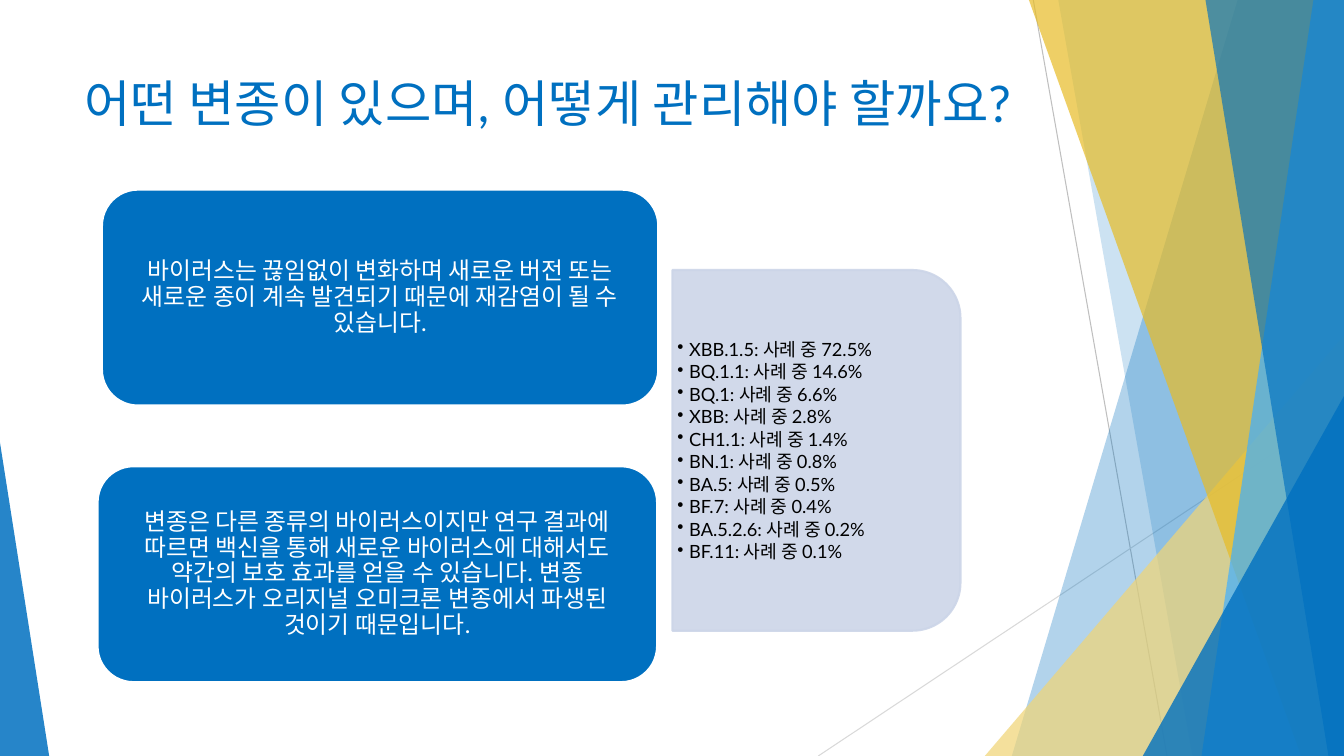
from dataclasses import dataclass

from lxml import etree
from pptx import Presentation
from pptx import util as u
from pptx.dml.color import RGBColor
from pptx.enum import shapes as sh, text as tx
from pptx.oxml.ns import qn

WIDE, HIGH = 33.87, 19.05
FONT = "Lato"
HUES = {
    "blue": "0070C0", "sky": "40AFFF", "gold": "E7BC26", "sand": "F0D577",
    "mist": "CCD5E8", "gray": "BFBFBF", "pale": "D9D9D9",
    "white": "FFFFFF", "black": "000000",
}


@dataclass
class Ray:
    start: tuple[float, float]
    end: tuple[float, float]
    hue: str


@dataclass
class Band:
    """Runs from its slanted left side to the slide's right edge."""
    top: float
    base: float
    hue: str
    alpha: int


@dataclass
class Wedge:
    """A right triangle that stands on the slide's lower edge."""
    left: float
    top: float
    width: float
    apex: int
    hue: str
    alpha: int


@dataclass
class Card:
    left: float
    top: float
    width: float
    words: str


RAYS = [
    Ray((26.04, 0), (29.41, HIGH), "gray"),
    Ray((WIDE, 10.24), (20.62, HIGH), "pale"),
]
PANES = [
    Band(31.19, 25.5, "blue", 30),
    Band(26.67, 30.05, "blue", 20),
    Wedge(24.82, 8.46, 9.05, 1, "sand", 72),
    Band(25.93, 32.79, "gold", 70),
    Band(33.1, 30.28, "sky", 70),
    Band(30.38, 33.48, "blue", 65),
    Wedge(28.8, 9.98, 5.07, 1, "blue", 80),
    Wedge(0, 11.15, 1.24, 0, "blue", 85),
]
CARDS = [
    Card(2.57, 4.78, 14.02, "바이러스는 끊임없이 변화하며 새로운 버전 또는 새로운 종이 "
         "계속 발견되기 때문에 재감염이 될 수 있습니다."),
    Card(2.46, 11.75, 14.1, "변종은 다른 종류의 바이러스이지만 연구 결과에 따르면 백신을 "
         "통해 새로운 바이러스에 대해서도 약간의 보호 효과를 얻을 수 있습니다. 변종 "
         "바이러스가 오리지널 오미크론 변종에서 파생된 것이기 때문입니다."),
]
CASES = [
    ("XBB.1.5", 72.5), ("BQ.1.1", 14.6), ("BQ.1", 6.6), ("XBB", 2.8),
    ("CH1.1", 1.4), ("BN.1", 0.8), ("BA.5", 0.5), ("BF.7", 0.4),
    ("BA.5.2.6", 0.2), ("BF.11", 0.1),
]


def rgb(hue: str) -> RGBColor:
    return RGBColor.from_string(HUES[hue])


def fade(fill, alpha: int) -> None:
    tint = fill._xPr.find(".//" + qn("a:srgbClr"))
    etree.SubElement(tint, qn("a:alpha")).set("val", str(alpha * 1000))


def paint(shape, hue: str, alpha: int = 100) -> None:
    shape.shadow.inherit = False
    shape.fill.solid()
    shape.fill.fore_color.rgb = rgb(hue)
    if alpha < 100:
        fade(shape.fill, alpha)
    shape.line.fill.background()


def edge(shape, hue: str, alpha: int = 100) -> None:
    shape.line.color.rgb = rgb(hue)
    shape.line.width = u.Pt(1.5)
    if alpha < 100:
        fade(shape.line.fill, alpha)


def style(para, size: float, hue: str) -> None:
    for run in para.runs:
        run.font.name = FONT
        run.font.size = u.Pt(size)
        run.font.color.rgb = rgb(hue)


def inset(frame, side: float, rise: float) -> None:
    frame.word_wrap = True
    frame.vertical_anchor = tx.MSO_ANCHOR.MIDDLE
    frame.margin_left = frame.margin_right = u.Cm(side)
    frame.margin_top = frame.margin_bottom = u.Cm(rise)


def bullet(para) -> None:
    props = para._p.get_or_add_pPr()
    props.set("marL", str(u.Cm(0.3)))
    props.set("indent", str(u.Cm(-0.3)))
    etree.SubElement(props, qn("a:buChar")).set("char", "•")


def draw_ray(tree, ray: Ray) -> None:
    line = tree.add_connector(sh.MSO_CONNECTOR.STRAIGHT,
                              *map(u.Cm, ray.start + ray.end))
    line.line.color.rgb = rgb(ray.hue)
    line.line.width = u.Pt(0.75)
    etree.SubElement(line._element.spPr, qn("a:effectLst"))


def draw_pane(tree, pane: Band | Wedge) -> None:
    if isinstance(pane, Band):
        path = tree.build_freeform(u.Cm(pane.top), 0)
        spots = [(WIDE, 0), (WIDE, HIGH), (pane.base, HIGH)]
        path.add_line_segments([(u.Cm(x), u.Cm(y)) for x, y in spots])
        shape = path.convert_to_shape()
    else:
        box = (pane.left, pane.top, pane.width, HIGH - pane.top)
        shape = tree.add_shape(sh.MSO_SHAPE.ISOSCELES_TRIANGLE, *map(u.Cm, box))
        shape.adjustments[0] = pane.apex
    paint(shape, pane.hue, pane.alpha)


def draw_card(tree, card: Card) -> None:
    box = (card.left, card.top, card.width, 5.44)
    shape = tree.add_shape(sh.MSO_SHAPE.ROUNDED_RECTANGLE, *map(u.Cm, box))
    paint(shape, "blue")
    edge(shape, "white")
    frame = shape.text_frame
    frame.text = card.words
    inset(frame, 0.18, 0.1)
    para = frame.paragraphs[0]
    para.alignment = tx.PP_ALIGN.CENTER
    para.line_spacing = 0.9
    style(para, 17, "white")


def draw_cases(tree) -> None:
    box = (16.03, 7.72, 9.09, 7.26)
    panel = tree.add_shape(sh.MSO_SHAPE.ROUND_2_SAME_RECTANGLE, *map(u.Cm, box))
    panel.rotation = 90
    paint(panel, "mist", 90)
    edge(panel, "mist", 90)
    frame = tree.add_textbox(*map(u.Cm, (16.94, 7.19, 6.91, 8.38))).text_frame
    frame.text = "\n".join(f"{name}: 사례 중 {share}%" for name, share in CASES)
    inset(frame, 0.13, 0.08)
    for para in frame.paragraphs:
        para.line_spacing = 0.9
        para.space_after = u.Pt(2)
        bullet(para)
        style(para, 13, "black")


def main() -> None:
    deck = Presentation()
    deck.slide_width, deck.slide_height = u.Cm(WIDE), u.Cm(HIGH)
    tree = deck.slides.add_slide(deck.slide_layouts[6]).shapes

    # Backdrop
    for ray in RAYS:
        draw_ray(tree, ray)
    for pane in PANES:
        draw_pane(tree, pane)

    # Title
    frame = tree.add_textbox(*map(u.Cm, (1.88, 1.7, 23.88, 3.66))).text_frame
    frame.word_wrap = True
    frame.text = "어떤 변종이 있으며, 어떻게 관리해야 할까요?"
    style(frame.paragraphs[0], 36, "blue")

    # Variant shares and cards
    draw_cases(tree)
    for card in CARDS:
        draw_card(tree, card)

    deck.save("out.pptx")


if __name__ == "__main__":
    main()
